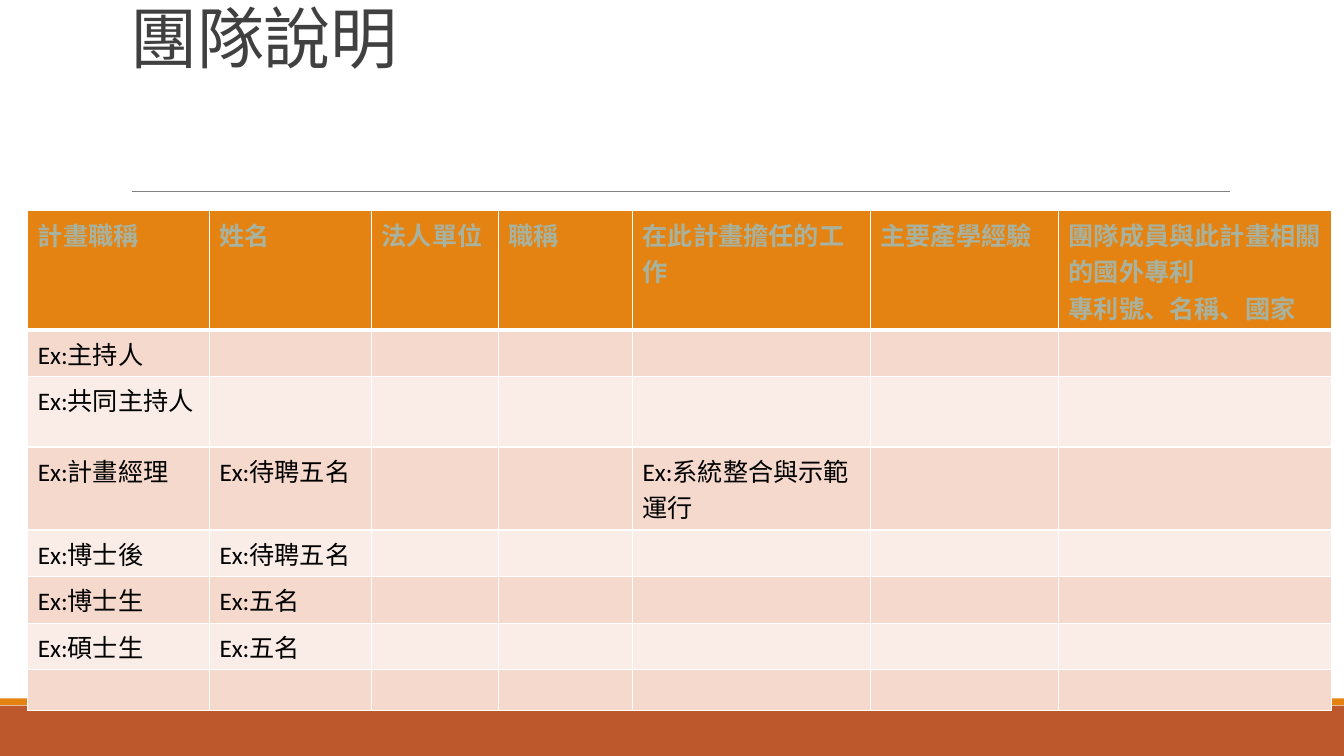
from lxml.etree import SubElement
from pptx import Presentation
from pptx.dml.color import RGBColor
from pptx.enum.shapes import MSO_CONNECTOR as Connector, MSO_SHAPE as Shape
from pptx.enum.text import MSO_ANCHOR as Anchor
from pptx.oxml.ns import qn
from pptx.util import Pt

COLORS = {
    "title": "404040", "rule": "808080", "rust": "BD582C", "orange": "E48312",
    "header_text": "A8B29E", "body_text": "000000", "border": "FFFFFF",
    "band_dark": "F5D9CC", "band_light": "FAEDE7",
}
FONT = "Calibri"
COLUMN_WIDTHS = [129.8, 115.8, 90.7, 95.8, 169.9, 134.4, 195]
ROW_HEIGHTS = [85, 33.3, 33.3, 59.3, 33.3, 33.3, 33.3, 28.8]
HEADERS = [
    "計畫職稱", "姓名", "法人單位", "職稱", "在此計畫擔任的工作", "主要產學經驗",
    "團隊成員與此計畫相關的國外專利\n專利號、名稱、國家",
]
MEMBERS = [
    {0: "Ex:主持人"},
    {0: "Ex:共同主持人"},
    {0: "Ex:計畫經理", 1: "Ex:待聘五名", 4: "Ex:系統整合與示範運行"},
    {0: "Ex:博士後", 1: "Ex:待聘五名"},
    {0: "Ex:博士生", 1: "Ex:五名"},
    {0: "Ex:碩士生", 1: "Ex:五名"},
    {},
]


def color(name):
    """Return the named colour."""
    return RGBColor.from_string(COLORS[name])


def add_span(para, text, size, color_name, bold=False):
    """Add one styled run to a paragraph."""
    span = para.add_run()
    span.text = text
    span.font.name = FONT
    span.font.size = Pt(size)
    span.font.bold = bold
    span.font.color.rgb = color(color_name)
    return span


def add_bar(page, top, height, color_name):
    """Add a full-width footer bar."""
    bar = page.shapes.add_shape(Shape.RECTANGLE, 0, Pt(top), Pt(960), Pt(height))
    bar.shadow.inherit = False
    bar.fill.solid()
    bar.fill.fore_color.rgb = color(color_name)
    bar.line.fill.background()


def add_rule(page, left, right, top):
    """Add the thin line under the title."""
    rule = page.shapes.add_connector(
        Connector.STRAIGHT, Pt(left), Pt(top), Pt(right), Pt(top))
    rule.line.color.rgb = color("rule")
    rule.line.width = Pt(0.5)
    SubElement(rule._element.spPr, qn("a:effectLst"))


def add_title(page, text):
    """Add the slide title."""
    box = page.shapes.add_textbox(Pt(86.4), 0, Pt(792), Pt(59))
    frame = box.text_frame
    frame.word_wrap = True
    frame.vertical_anchor = Anchor.BOTTOM
    para = frame.paragraphs[0]
    para.line_spacing = 0.85
    span = add_span(para, text, 48, "title")
    span.font._element.set("spc", "-50")


def set_borders(cell, bottom_width):
    """Draw the four borders of a cell."""
    properties = cell._tc.get_or_add_tcPr()
    widths = {"a:lnL": 1, "a:lnR": 1, "a:lnT": 1, "a:lnB": bottom_width}
    for tag, width in widths.items():
        line = SubElement(properties, qn(tag), w=str(Pt(width)))
        fill = SubElement(line, qn("a:solidFill"))
        SubElement(fill, qn("a:srgbClr"), val=COLORS["border"])


def fill_cell(cell, text, fill_name, is_header):
    """Set the text, borders and fill of a cell."""
    set_borders(cell, 3 if is_header else 1)
    cell.fill.solid()
    cell.fill.fore_color.rgb = color(fill_name)
    frame = cell.text_frame
    text_color = "header_text" if is_header else "body_text"
    for index, line in enumerate(text.split("\n") if text else []):
        para = frame.add_paragraph() if index else frame.paragraphs[0]
        add_span(para, line, 18, text_color, is_header)


def add_team_table(page):
    """Add the table of team members."""
    table = page.shapes.add_table(
        len(ROW_HEIGHTS), len(COLUMN_WIDTHS), Pt(19.8), Pt(150.6),
        Pt(sum(COLUMN_WIDTHS)), Pt(sum(ROW_HEIGHTS))).table
    for column, width in zip(table.columns, COLUMN_WIDTHS):
        column.width = Pt(width)
    for row, height in zip(table.rows, ROW_HEIGHTS):
        row.height = Pt(height)
    for index, header in enumerate(HEADERS):
        fill_cell(table.cell(0, index), header, "orange", True)
    for number, member in enumerate(MEMBERS, start=1):
        band = "band_dark" if number % 2 else "band_light"
        for index in range(len(HEADERS)):
            fill_cell(table.cell(number, index), member.get(index, ""), band, False)


def main():
    """Build the team slide and save it."""
    deck = Presentation()
    deck.slide_width, deck.slide_height = Pt(960), Pt(540)
    page = deck.slides.add_slide(deck.slide_layouts[6])
    add_bar(page, 504, 36, "rust")
    add_bar(page, 498.8, 5, "orange")
    add_rule(page, 94.3, 878.8, 136.8)
    add_title(page, "團隊說明")
    add_team_table(page)
    deck.save("out.pptx")


if __name__ == "__main__":
    main()
